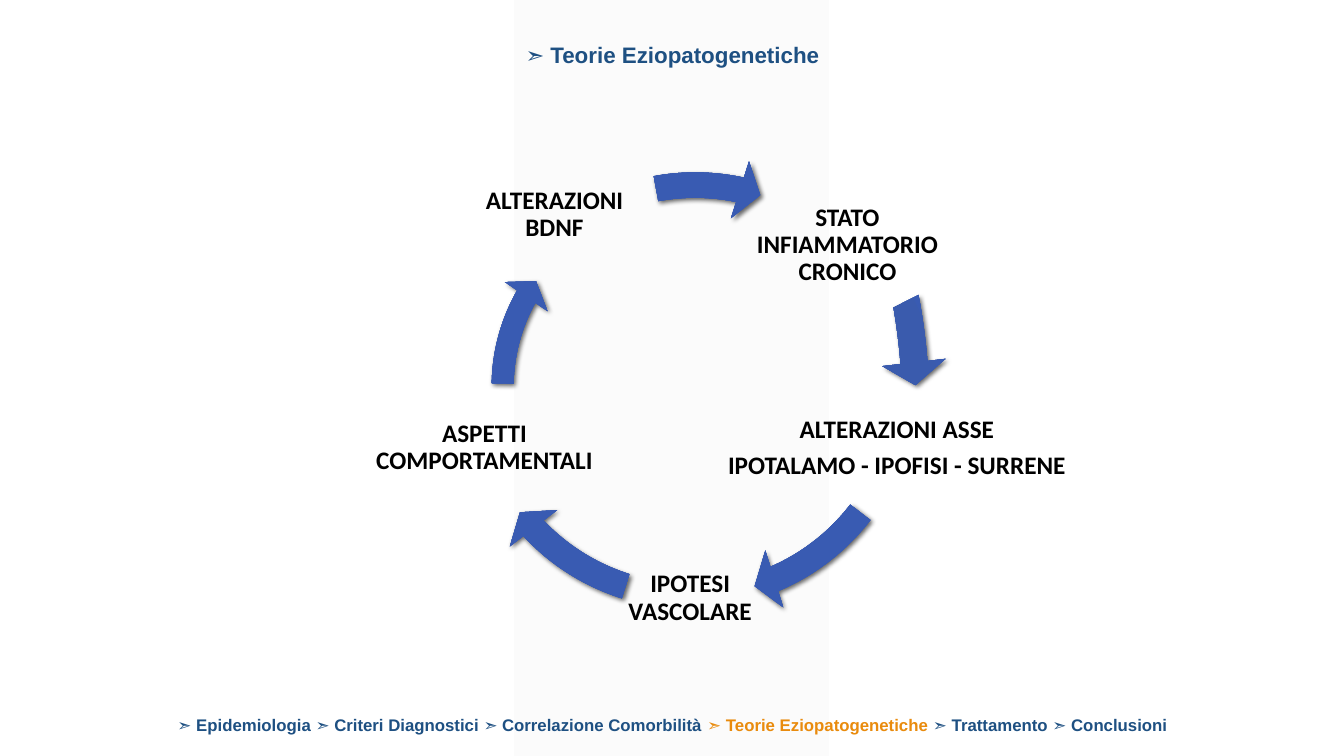
from lxml import etree
from pptx import Presentation
from pptx import util as u
from pptx.dml.color import RGBColor
from pptx.enum import shapes, text
from pptx.oxml.ns import qn

NAVY = RGBColor(0x1E, 0x50, 0x82)
ORANGE = RGBColor(0xE9, 0x8B, 0x0D)
BLACK = RGBColor(0, 0, 0)
GREY = RGBColor(0xF2, 0xF2, 0xF2)
BLUES = [
    (0, RGBColor(0x37, 0x59, 0xAE)),
    (34, RGBColor(0x3A, 0x5B, 0xAD)),
    (70, RGBColor(0x39, 0x5B, 0xB2)),
    (100, RGBColor(0x45, 0x64, 0xB1)),
]

deck = Presentation()
deck.slide_width, deck.slide_height = u.Inches(13.33), u.Inches(7.5)
slide = deck.slides.add_slide(deck.slide_layouts[6])


def add_text(box, lines, form, frame_form, par_form):
    """Add a text box; each line is a list of (words, colour) runs."""
    frame = slide.shapes.add_textbox(*map(u.Inches, box)).text_frame
    frame.word_wrap = True
    for key, value in frame_form.items():
        setattr(frame, key, value)
    for i, line in enumerate(lines):
        par = frame.add_paragraph() if i else frame.paragraphs[0]
        par.alignment = text.PP_ALIGN.CENTER
        for key, value in par_form.items():
            setattr(par, key, value)
        for words, ink in line:
            run = par.add_run()
            run.text = words
            run.font.color.rgb = ink
            for key, value in form.items():
                setattr(run.font, key, value)


def add_shape(kind, box, turns):
    """Add a preset shape without line or shadow."""
    shape = slide.shapes.add_shape(kind, *map(u.Inches, box))
    for i, turn in enumerate(turns):
        shape.adjustments[i] = turn
    shape.line.fill.background()
    shape.shadow.inherit = False
    return shape


# Pale band behind everything
band = add_shape(shapes.MSO_SHAPE.PARALLELOGRAM, (5.1, 0, 3.12, 7.5), [0])
band.fill.solid()
band.fill.fore_color.rgb = GREY
tint = next(band.element.spPr.iter(qn("a:srgbClr")))
etree.SubElement(tint, qn("a:alpha"), val="30000")

# Title and section trail
grow = {"auto_size": text.MSO_AUTO_SIZE.SHAPE_TO_FIT_TEXT}
arial = {"name": "Arial", "bold": True}
add_text((1.3, 0.36, 10.74, 0.37), [[("➣ Teorie Eziopatogenetiche", NAVY)]],
         {**arial, "size": u.Pt(16)}, grow, {})
trail = [
    ("➣ Epidemiologia ➣ Criteri Diagnostici ➣ Correlazione Comorbilità ", NAVY),
    ("➣ Teorie Eziopatogenetiche ", ORANGE),
    ("➣ Trattamento ➣ Conclusioni", NAVY),
]
add_text((0.21, 7.04, 12.92, 0.3), [trail], {**arial, "size": u.Pt(12)}, grow, {})

# Cycle: label box, label lines, arrow box, arrow end and start angles
cycle = [
    ((7.37, 1.79, 2.07, 1.29), ["STATO INFIAMMATORIO CRONICO"],
     (4.22, 0, 5.18, 8.17), (208.665, 199.959)),
    ((7.02, 3.8, 3.75, 1.29), ["ALTERAZIONI ASSE", "IPOTALAMO - IPOFISI - SURRENE"],
     (4.42, 1.36, 4.85, 4.85), (40.152, 22.53)),
    ((6.2, 5.29, 1.29, 1.29), ["IPOTESI VASCOLARE"],
     (4.42, 1.36, 4.85, 4.85), (82.113, 64.49)),
    ((3.62, 3.8, 2.37, 1.29), ["ASPETTI COMPORTAMENTALI"],
     (4.73, 1.74, 4.24, 4.19), (125.218, 108.575)),
    ((4.68, 1.65, 1.64, 0.97), ["ALTERAZIONI BDNF"],
     (4.47, 1.54, 4.85, 4.85), (169.227, 155.685)),
]
label = {"name": "Calibri", "bold": True, "size": u.Pt(18)}
inset = {f"margin_{side}": u.Inches(0.03) for side in ("left", "top", "right", "bottom")}
inset["vertical_anchor"] = text.MSO_ANCHOR.MIDDLE
gaps = {"line_spacing": 0.9, "space_after": u.Pt(6.3)}

for box, lines, ring, angles in cycle:
    add_text(box, [[(line, BLACK)] for line in lines], label, inset, gaps)
    arrow = add_shape(shapes.MSO_SHAPE.CIRCULAR_ARROW, ring,
                      (0.052, 3.358, *angles, 0.061))
    props = arrow.element.spPr

    # Radial gradient
    grad = etree.Element(qn("a:gradFill"), rotWithShape="1")
    stops = etree.SubElement(grad, qn("a:gsLst"))
    for place, ink in BLUES:
        stop = etree.SubElement(stops, qn("a:gs"), pos=str(place * 1000))
        etree.SubElement(stop, qn("a:srgbClr"), val=str(ink))
    path = etree.SubElement(grad, qn("a:path"), path="circle")
    etree.SubElement(path, qn("a:fillToRect"), {side: "100000" for side in "ltrb"})
    props.find(qn("a:prstGeom")).addnext(grad)

    # Soft shadow
    shade = etree.SubElement(props.find(qn("a:effectLst")), qn("a:outerShdw"),
                             blurRad=str(u.Pt(3.5)), dist=str(u.Pt(2)),
                             dir=str(45 * 60000), rotWithShape="0")
    dark = etree.SubElement(shade, qn("a:srgbClr"), val=str(BLACK))
    etree.SubElement(dark, qn("a:alpha"), val="60000")

deck.save("out.pptx")
